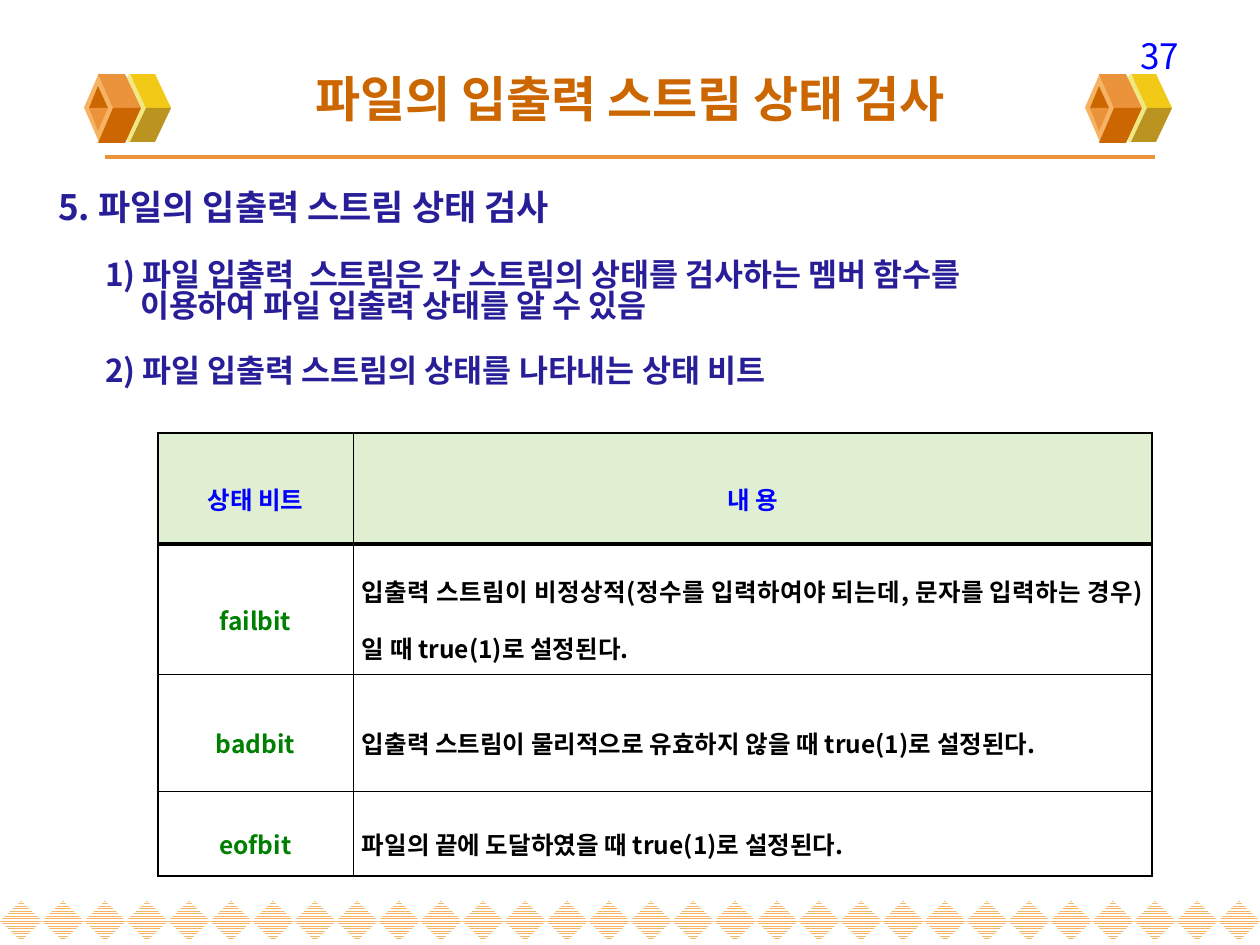
from dataclasses import dataclass

from lxml import etree
from pptx import Presentation
from pptx import util as u
from pptx.dml.color import RGBColor
from pptx.enum import dml, shapes, text
from pptx.oxml import ns

EMU_PER_PX = 914400 / 126
PAGE_WIDTH, PAGE_HEIGHT = 1260, 945
FONT = "Noto Sans CJK KR"
COLOURS = {
    "white": "FFFFFF", "black": "000000", "blue": "0000FF", "green": "008000",
    "navy": "271E98", "brown": "CC6600", "orange": "EB933B", "peach": "F5B363",
    "cream": "F1E785", "yellow": "F3C917", "olive": "BB9321", "mint": "E0EED1",
}
ALIGN = text.PP_ALIGN
ANCHOR = text.MSO_ANCHOR
Points = tuple[tuple[int, int], ...]


@dataclass(frozen=True)
class Box:
    left: int
    top: int
    width: int
    height: int


@dataclass(frozen=True)
class Face:
    points: Points
    colour: str


@dataclass(frozen=True)
class OutlineItem:
    words: str
    size: int
    indent: int
    gap: int = 0


@dataclass(frozen=True)
class StateBit:
    name: str
    meaning: str


BAND_FACES = (
    Face(((62, 35), (87, 35), (71, 1), (46, 1)), "yellow"),
    Face(((62, 35), (87, 35), (71, 69), (46, 69)), "olive"),
)
FRONT_FACES = (
    Face(((29, 35), (57, 35), (41, 1), (14, 1)), "orange"),
    Face(((29, 35), (57, 35), (41, 70), (14, 70)), "brown"),
    Face(((14, 13), (5, 35), (24, 35)), "brown"),
    Face(((14, 58), (5, 35), (24, 35)), "orange"),
)
OUTLINE = (
    OutlineItem("5. 파일의 입출력 스트림 상태 검사", 20, 16),
    OutlineItem("1) 파일 입출력  스트림은 각 스트림의 상태를 검사하는 멤버 함수를", 18, 63, 20),
    OutlineItem("이용하여 파일 입출력 상태를 알 수 있음", 18, 98),
    OutlineItem("2) 파일 입출력 스트림의 상태를 나타내는 상태 비트", 18, 63, 20),
)
STATE_BITS = (
    StateBit("failbit", "입출력 스트림이 비정상적(정수를 입력하여야 되는데, 문자를 입력하는 경우)일 때 true(1)로 설정된다."),
    StateBit("badbit", "입출력 스트림이 물리적으로 유효하지 않을 때 true(1)로 설정된다."),
    StateBit("eofbit", "파일의 끝에 도달하였을 때 true(1)로 설정된다."),
)
TABLE_BOX = Box(158, 433, 994, 443)
COLUMN_WIDTHS = (195, 799)
ROW_HEIGHTS = (111, 130, 117, 85)
OUTER, HEADER_RULE, INNER = 1.7, 1.98, 0.28


def px(length: int) -> u.Emu:
    return u.Emu(round(length * EMU_PER_PX))


def rgb(colour: str) -> RGBColor:
    return RGBColor.from_string(COLOURS[colour])


def frame(box: Box) -> tuple[u.Emu, ...]:
    return px(box.left), px(box.top), px(box.width), px(box.height)


def write(para, words: str, *, size: int, colour: str, bold: bool = True,
          align=ALIGN.LEFT, spacing: float = 1.0, gap: int = 0, indent: int = 0) -> None:
    para.alignment = align
    para.line_spacing = spacing
    para.space_before = u.Pt(gap)
    if indent:
        para._p.get_or_add_pPr().set("marL", str(px(indent)))
    span = para.add_run()
    span.text = words
    span.font.size = u.Pt(size)
    span.font.bold = bold
    span.font.color.rgb = rgb(colour)
    span.font.name = FONT
    etree.SubElement(span._r.get_or_add_rPr(), ns.qn("a:ea")).set("typeface", FONT)


def add_text_frame(page, box: Box, anchor=ANCHOR.TOP, side: int = 13, edge: int = 6):
    area = page.shapes.add_textbox(*frame(box)).text_frame
    area.word_wrap = True
    area.vertical_anchor = anchor
    area.margin_left = area.margin_right = px(side)
    area.margin_top = area.margin_bottom = px(edge)
    return area


def paint(shape, colour: str) -> None:
    shape.shadow.inherit = False
    shape.line.fill.background()
    shape.fill.solid()
    shape.fill.fore_color.rgb = rgb(colour)


def add_diamond(page, box: Box, colour: str):
    diamond = page.shapes.add_shape(shapes.MSO_SHAPE.DIAMOND, *frame(box))
    paint(diamond, colour)
    return diamond


def add_face(page, face: Face, left: int, top: int) -> None:
    start, *rest = [(left + x, top + y) for x, y in face.points]
    builder = page.shapes.build_freeform(*start, scale=EMU_PER_PX)
    builder.add_line_segments(rest, close=True)
    paint(builder.convert_to_shape(), face.colour)


def add_block(page, left: int, top: int) -> None:
    """Draw one of the hexagonal ornaments beside the title."""
    add_diamond(page, Box(left + 24, top + 1, 42, 69), "cream")
    for face in BAND_FACES:
        add_face(page, face, left, top)
    add_diamond(page, Box(left, top, 30, 69), "peach")
    for face in FRONT_FACES:
        add_face(page, face, left, top)


def add_border(page) -> None:
    """Fill the foot of the page with striped diamonds."""
    step = 42
    for left in range(0, PAGE_WIDTH, step):
        fill = add_diamond(page, Box(left, 901, step, 40), "peach").fill
        fill.patterned()
        fill.pattern = dml.MSO_PATTERN.NARROW_HORIZONTAL
        fill.fore_color.rgb = rgb("peach")
        fill.back_color.rgb = rgb("white")


def add_title_rule(page) -> None:
    rule = page.shapes.add_connector(
        shapes.MSO_CONNECTOR.STRAIGHT, px(105), px(157), px(1155), px(157))
    rule.line.color.rgb = rgb("orange")
    rule.line.width = u.Pt(2.25)
    etree.SubElement(rule._element.spPr, ns.qn("a:effectLst"))


def set_cell_borders(cell, widths: dict[str, float]) -> None:
    properties = cell._tc.get_or_add_tcPr()
    for place, (side, width) in enumerate(widths.items()):
        line = etree.Element(ns.qn(f"a:ln{side}"), w=str(u.Pt(width)))
        fill = etree.SubElement(line, ns.qn("a:solidFill"))
        etree.SubElement(fill, ns.qn("a:srgbClr")).set("val", COLOURS["black"])
        properties.insert(place, line)


def add_state_table(page) -> None:
    rows = (StateBit("상태 비트", "내 용"), *STATE_BITS)
    table = page.shapes.add_table(len(rows), 2, *frame(TABLE_BOX)).table
    for column, width in zip(table.columns, COLUMN_WIDTHS):
        column.width = px(width)
    rules = (OUTER, HEADER_RULE, INNER, INNER, OUTER)
    for r, (bit, height) in enumerate(zip(rows, ROW_HEIGHTS)):
        table.rows[r].height = px(height)
        header = r == 0
        for c, words in enumerate((bit.name, bit.meaning)):
            cell = table.cell(r, c)
            cell.vertical_anchor = ANCHOR.MIDDLE
            cell.margin_left = cell.margin_right = px(9)
            cell.margin_top = cell.margin_bottom = px(3)
            cell.fill.solid()
            cell.fill.fore_color.rgb = rgb("mint" if header else "white")
            write(cell.text_frame.paragraphs[0], words, size=14, spacing=1.6,
                  colour="blue" if header else ("green", "black")[c],
                  align=ALIGN.CENTER if header or c == 0 else ALIGN.JUSTIFY)
            set_cell_borders(cell, {"L": (OUTER, INNER)[c], "R": (INNER, OUTER)[c],
                                    "T": rules[r], "B": rules[r + 1]})


def main() -> None:
    deck = Presentation()
    deck.slide_width, deck.slide_height = px(PAGE_WIDTH), px(PAGE_HEIGHT)
    page = deck.slides.add_slide(deck.slide_layouts[6])
    add_border(page)
    add_title_rule(page)
    for left in (84, 1085):
        add_block(page, left, 73)
    number = add_text_frame(page, Box(898, 35, 281, 38), side=0, edge=0)
    write(number.paragraphs[0], "37", size=20, colour="blue", bold=False, align=ALIGN.RIGHT)
    title = add_text_frame(page, Box(63, 38, 1134, 120), ANCHOR.MIDDLE)
    write(title.paragraphs[0], "파일의 입출력 스트림 상태 검사", size=28, colour="brown",
          align=ALIGN.CENTER)
    body = add_text_frame(page, Box(29, 188, 1113, 236))
    for i, item in enumerate(OUTLINE):
        para = body.add_paragraph() if i else body.paragraphs[0]
        write(para, item.words, size=item.size, colour="navy", spacing=0.8,
              gap=item.gap, indent=item.indent)
    add_state_table(page)
    deck.save("out.pptx")


if __name__ == "__main__":
    main()
